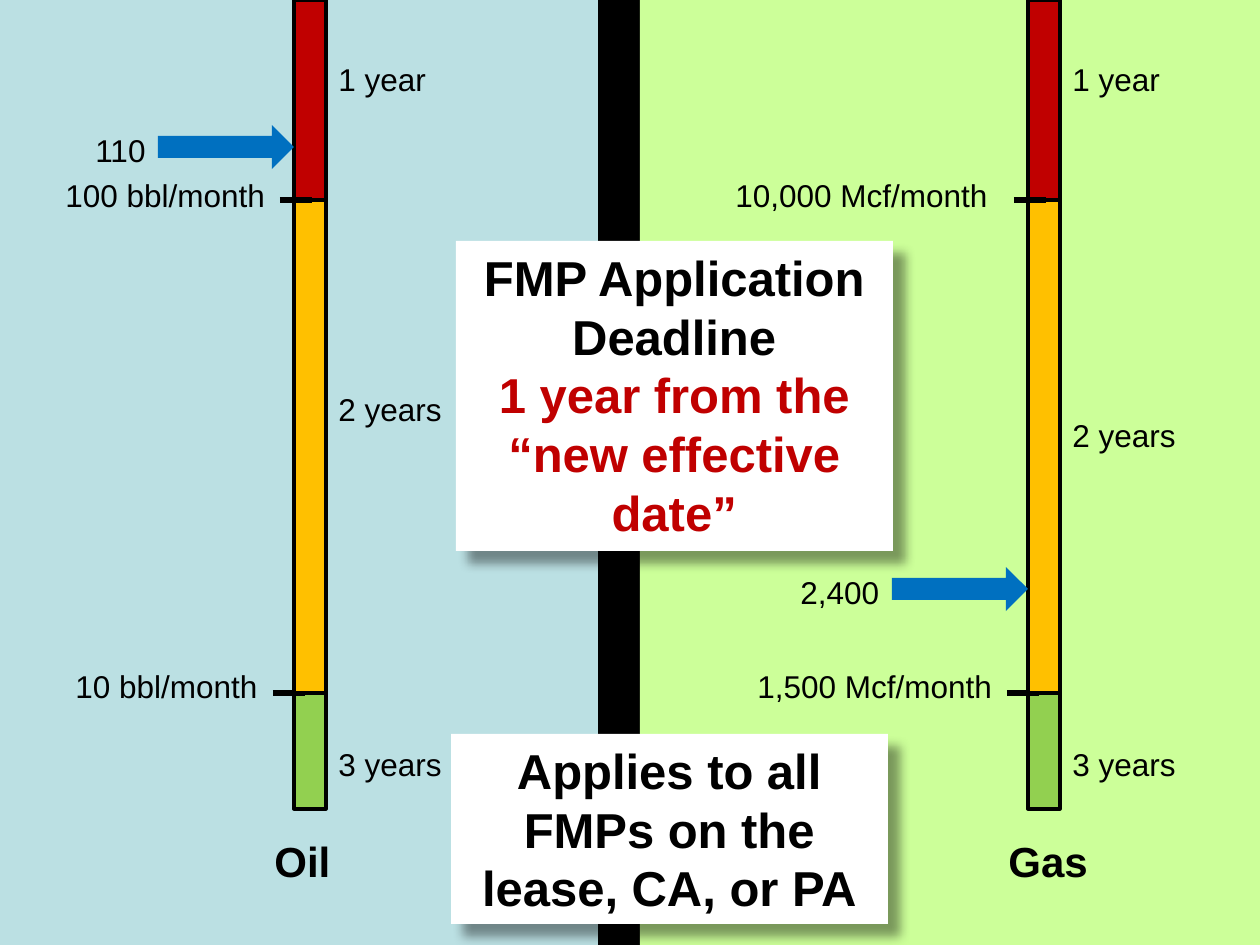
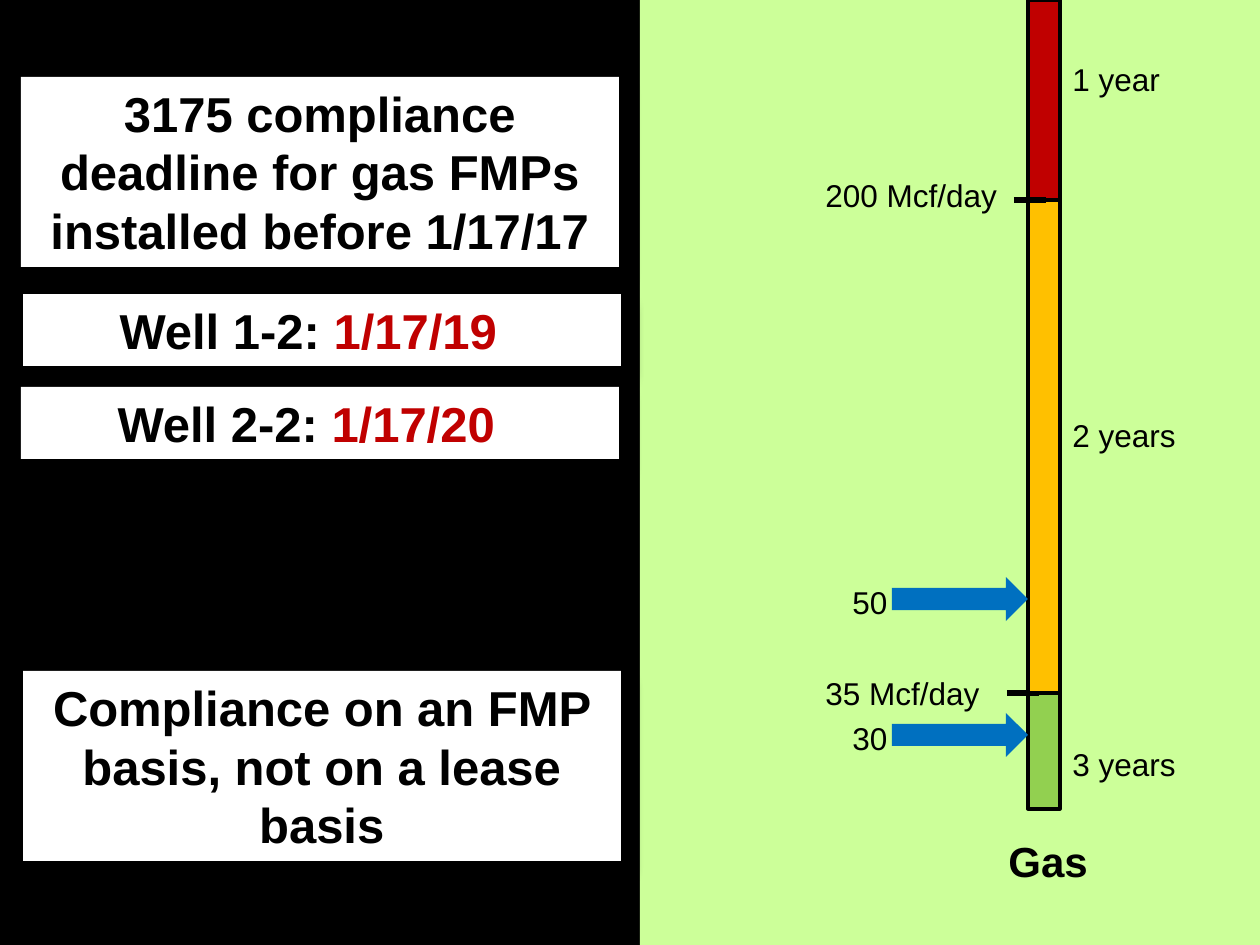
from lxml.etree import SubElement
from pptx import Presentation
from pptx.dml.color import RGBColor
from pptx.enum.shapes import MSO_CONNECTOR, MSO_SHAPE
from pptx.enum.text import MSO_ANCHOR, MSO_AUTO_SIZE, PP_ALIGN
from pptx.oxml.ns import qn
from pptx.util import Emu, Pt

PX_PER_INCH = 126
BLACK, WHITE, RED = "000000", "FFFFFF", "C00000"
ORANGE, GREEN, BLUE = "FFC000", "92D050", "0070C0"
OIL_BG, GAS_BG = "BBE0E3", "CCFF99"
FONT = "Arial"

BAR_W = 32
UPPER_Y, LOWER_Y, BOTTOM_Y = 200, 693, 809
TICK_W, ARROW_W, ARROW_H, LABEL_H = 32, 136, 44, 50
OIL_PANEL, GAS_PANEL = (0, 0, 598, 945), (640, 0, 620, 945)
OIL_BAR_X, GAS_BAR_X = 294, 388


def px(n):
    return Emu(round(n * 914400 / PX_PER_INCH))


def rgb(color):
    return RGBColor.from_string(color)


def add_box(shapes, box, fill, kind=MSO_SHAPE.RECTANGLE, line=None):
    sp = shapes.add_shape(kind, *map(px, box))
    sp.shadow.inherit = False
    sp.fill.solid()
    sp.fill.fore_color.rgb = rgb(fill)
    if line:
        sp.line.color.rgb = rgb(line)
        sp.line.width = Pt(2)
    else:
        sp.line.fill.background()
    return sp


def style(font, size, bold=False):
    font.name, font.size, font.bold = FONT, Pt(size), bold


def add_label(shapes, box, text, size=18, bold=False):
    tf = shapes.add_textbox(*map(px, box)).text_frame
    tf.word_wrap = True
    tf.auto_size = MSO_AUTO_SIZE.SHAPE_TO_FIT_TEXT
    p = tf.paragraphs[0]
    p.text = text
    style(p.font, size, bold)
    p.font.color.rgb = rgb(BLACK)


def add_tick(shapes, x, y):
    ln = shapes.add_connector(MSO_CONNECTOR.STRAIGHT, px(x), px(y), px(x + TICK_W), px(y))
    ln.line.color.rgb = rgb(BLACK)
    ln.line.width = Pt(3)
    SubElement(ln._element.spPr, qn("a:effectLst"))


def add_card_shadow(sp):
    effects = sp._element.spPr.find(qn("a:effectLst"))
    shadow = SubElement(effects, qn("a:outerShdw"), blurRad=str(Pt(6)), dist=str(Pt(10)),
                        dir=str(45 * 60000), algn="tl", rotWithShape="0")
    color = SubElement(shadow, qn("a:srgbClr"), val=BLACK)
    SubElement(color, qn("a:alpha"), val="40000")


def add_card(slide, box, paragraphs, right_inset=13):
    sp = add_box(slide.shapes, box, WHITE)
    add_card_shadow(sp)
    tf = sp.text_frame
    tf.word_wrap = True
    tf.auto_size = MSO_AUTO_SIZE.SHAPE_TO_FIT_TEXT
    tf.vertical_anchor = MSO_ANCHOR.TOP
    tf.margin_right = px(right_inset)
    for i, runs in enumerate(paragraphs):
        p = tf.add_paragraph() if i else tf.paragraphs[0]
        p.alignment = PP_ALIGN.CENTER
        style(p.font, 28, True)
        for text, color in runs:
            r = p.add_run()
            r.text = text
            r.font.color.rgb = rgb(color)


def add_gauge(slide, panel, bar_x, background, name, upper, lower, two_years_y):
    left, top, _, _ = panel
    x = left + bar_x
    shapes = slide.shapes
    add_box(shapes, panel, background)

    def segment(start, end, color):
        add_box(shapes, (x, top + start, BAR_W, end - start), color, line=BLACK)

    segment(LOWER_Y, BOTTOM_Y, GREEN)
    add_tick(shapes, x - 21, top + LOWER_Y)
    segment(UPPER_Y, LOWER_Y, ORANGE)
    segment(0, UPPER_Y, RED)
    add_tick(shapes, x - 14, top + UPPER_Y)
    for text, dx, y, w in (upper, lower):
        add_label(shapes, (x + dx, top + y, w, LABEL_H), text)
    for text, y in (("1 year", 54), ("2 years", two_years_y), ("3 years", 739)):
        add_label(shapes, (x + BAR_W, top + y, 168, LABEL_H), text)
    add_label(shapes, (x - 32, top + 829, 168, 63), name, 24, True)


def add_reading(slide, panel, bar_x, y, text, dx, w):
    x, y = panel[0] + bar_x, panel[1] + y
    group = slide.shapes.add_group_shape()
    add_box(group.shapes, (x - ARROW_W, y, ARROW_W, ARROW_H), BLUE, MSO_SHAPE.RIGHT_ARROW)
    add_label(group.shapes, (x + dx, y, w, LABEL_H), text)


def add_black_slide(prs):
    slide = prs.slides.add_slide(prs.slide_layouts[6])
    fill = slide.background.fill
    fill.solid()
    fill.fore_color.rgb = rgb(BLACK)
    return slide


def build_application_slide(prs):
    s = add_black_slide(prs)
    add_gauge(s, OIL_PANEL, OIL_BAR_X, OIL_BG, "Oil", ("100 bbl/month", -241, 170, 252),
              ("10 bbl/month", -231, 661, 252), 384)
    add_reading(s, OIL_PANEL, OIL_BAR_X, 125, "110", -211, 78)
    add_gauge(s, GAS_PANEL, GAS_BAR_X, GAS_BG, "Gas", ("10,000 Mcf/month", -305, 170, 283),
              ("1,500 Mcf/month", -283, 661, 283), 410)
    add_reading(s, GAS_PANEL, GAS_BAR_X, 567, "2,400", -240, 126)
    add_card(s, (451, 734, 437, 190), [[("Applies to all FMPs on the lease, CA, or PA", BLACK)]])
    add_card(s, (456, 241, 437, 310), [[("FMP Application Deadline", BLACK)],
                                       [("1 year from the “new effective date”", RED)]])


def build_compliance_slide(prs):
    s = add_black_slide(prs)
    add_gauge(s, GAS_PANEL, GAS_BAR_X, GAS_BG, "Gas", ("200 Mcf/day", -215, 170, 227),
              ("35 Mcf/day", -215, 668, 188), 410)
    add_card(s, (21, 77, 598, 190),
             [[("3175 compliance deadline for gas FMPs installed before 1/17/17", BLACK)]])
    wells = (("50", 577, "Well 1-2: ", "1/17/19", 23, 294),
             ("30", 713, "Well 2-2: ", "1/17/20", 21, 387))
    for value, arrow_y, well, date, x, y in wells:
        add_reading(s, GAS_PANEL, GAS_BAR_X, arrow_y, value, -188, 63)
        add_card(s, (x, y, 598, 72), [[(well, BLACK), (date, RED)]], right_inset=40)
    add_card(s, (23, 671, 598, 190),
             [[("Compliance on an FMP basis, not on a lease basis", BLACK)]])


def main():
    prs = Presentation()
    prs.slide_width, prs.slide_height = px(1260), px(945)
    build_application_slide(prs)
    build_compliance_slide(prs)
    prs.save("out.pptx")


if __name__ == "__main__":
    main()
